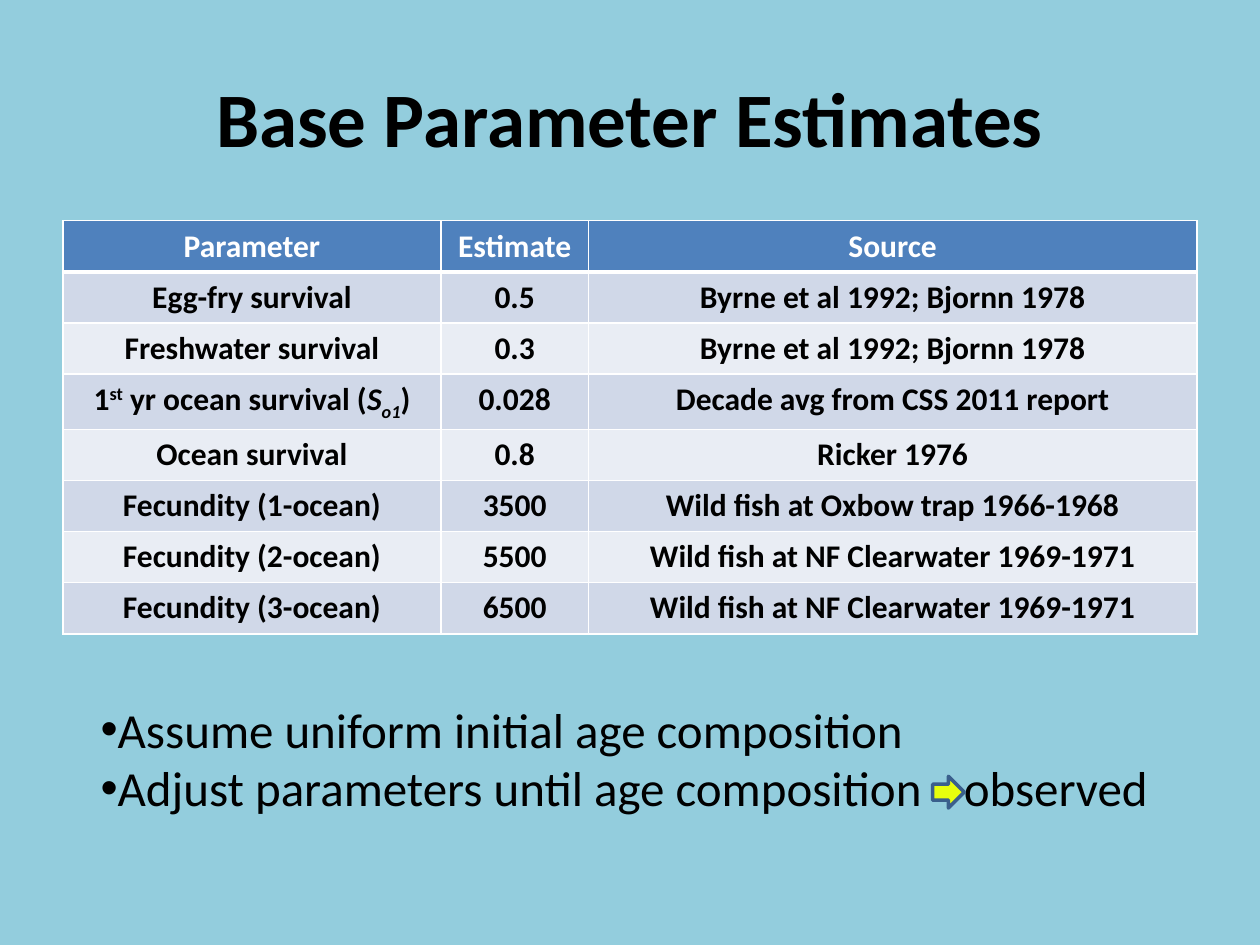
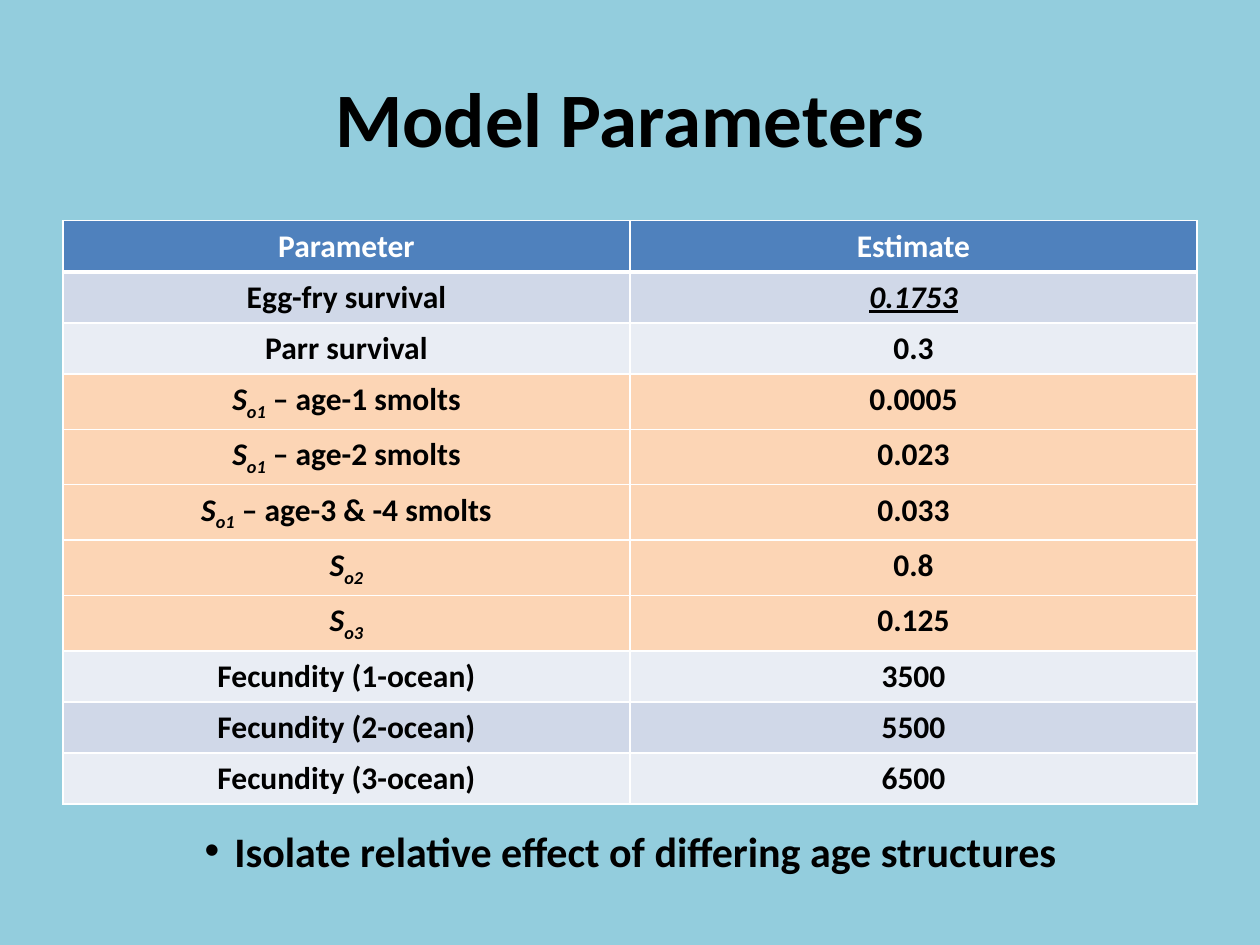
from dataclasses import dataclass

from lxml.etree import SubElement
from pptx import Presentation
from pptx.dml.color import RGBColor
from pptx.enum.shapes import MSO_SHAPE
from pptx.enum.text import MSO_ANCHOR, PP_ALIGN
from pptx.oxml.ns import qn
from pptx.util import Cm, Pt


@dataclass(frozen=True)
class Theme:
    font: str = "Calibri"
    background: str = "93CDDD"
    text: str = "000000"
    header_text: str = "FFFFFF"
    header: str = "4F81BD"
    bands: tuple = ("E9EDF4", "D0D8E8")
    highlight: str = "FCD5B5"
    rule: str = "FFFFFF"
    arrow: str = "E7FE0E"
    arrow_line: str = "3A5F8C"
    title_size: int = 44
    bullet_size: int = 28
    note_size: int = 24
    table_size: int = 18


def rgb(value):
    return RGBColor.from_string(value)


def ocean_survival(year):
    """Runs for the symbol S with its subscript."""
    return [("S", "italic"), (f"o{year}", "italic sub")]


class Deck:
    margin, width = Cm(1.27), Cm(22.86)

    def __init__(self, theme):
        self.theme = theme
        self.prs = Presentation()
        self.prs.slide_width, self.prs.slide_height = Cm(25.4), Cm(19.05)
        fill = self.prs.slide_master.background.fill
        fill.solid()
        fill.fore_color.rgb = rgb(theme.background)
        self.s = None

    def style(self, p, size, color=None, bold=False):
        for r in p.runs:
            r.font.name = self.theme.font
            r.font.size = Pt(size)
            r.font.bold = bold
            r.font.color.rgb = rgb(color or self.theme.text)

    def slide(self, title):
        self.s = self.prs.slides.add_slide(self.prs.slide_layouts[5])
        sp = self.s.shapes.title
        sp.left, sp.top, sp.width, sp.height = self.margin, Cm(0.76), self.width, Cm(3.18)
        tf = sp.text_frame
        tf.text = title
        tf.vertical_anchor = MSO_ANCHOR.MIDDLE
        p = tf.paragraphs[0]
        p.alignment = PP_ALIGN.CENTER
        self.style(p, self.theme.title_size, bold=True)

    def border(self, cell, side, points):
        tc_pr = cell._tc.get_or_add_tcPr()
        ln = SubElement(tc_pr, qn(f"a:ln{side}"), w=str(Pt(points)))
        SubElement(SubElement(ln, qn("a:solidFill")), qn("a:srgbClr"), val=self.theme.rule)

    def cell(self, cell, content, row, fill):
        p = cell.text_frame.paragraphs[0]
        p.alignment = PP_ALIGN.CENTER
        runs = [(content, "")] if isinstance(content, str) else content
        for text, marks in runs:
            r = p.add_run()
            r.text = text
            if "italic" in marks:
                r.font.italic = True
            if "underline" in marks:
                r.font.underline = True
            for mark, baseline in (("sub", "-25000"), ("super", "30000")):
                if mark in marks:
                    r.font._element.set("baseline", baseline)
        color = self.theme.header_text if row == 0 else self.theme.text
        self.style(p, self.theme.table_size, color, bold=True)
        for side in "LRTB":
            under_header = (row, side) in ((0, "B"), (1, "T"))
            self.border(cell, side, 3 if under_header else 1)
        cell.fill.solid()
        cell.fill.fore_color.rgb = rgb(fill)

    def table(self, rows, widths, highlighted=()):
        row_height = Cm(1.03)
        frame = self.s.shapes.add_table(len(rows), len(widths), self.margin, Cm(4.45),
                                        self.width, row_height * len(rows))
        table = frame.table
        for column, width in zip(table.columns, widths):
            column.width = Cm(width)
        for i, contents in enumerate(rows):
            table.rows[i].height = row_height
            fill = self.theme.bands[i % 2]
            if i == 0:
                fill = self.theme.header
            elif i in highlighted:
                fill = self.theme.highlight
            for j, content in enumerate(contents):
                self.cell(table.cell(i, j), content, i, fill)

    def bullets(self, lines, box, size, align=PP_ALIGN.LEFT, bold=False, hanging=0, tab=None):
        """Bulleted text box; hanging and tab are in centimetres."""
        tf = self.s.shapes.add_textbox(*map(Cm, box)).text_frame
        tf.word_wrap = True
        tf.text = "\n".join(lines)
        for p in tf.paragraphs:
            p.alignment = align
            self.style(p, size, bold=bold)
            p_pr = p._p.get_or_add_pPr()
            p_pr.set("marL", str(Cm(hanging)))
            p_pr.set("indent", str(-Cm(hanging)))
            SubElement(p_pr, qn("a:buFont"), typeface="Arial")
            SubElement(p_pr, qn("a:buChar"), char="•")
            if tab:
                tabs = SubElement(p_pr, qn("a:tabLst"))
                SubElement(tabs, qn("a:tab"), pos=str(Cm(tab)), algn="l")

    def arrow(self, left, top, side):
        sp = self.s.shapes.add_shape(MSO_SHAPE.RIGHT_ARROW, *map(Cm, (left, top, side, side)))
        sp.shadow.inherit = False
        sp.fill.solid()
        sp.fill.fore_color.rgb = rgb(self.theme.arrow)
        sp.line.color.rgb = rgb(self.theme.arrow_line)
        sp.line.width = Pt(2)


def base_estimates(deck):
    deck.slide("Base Parameter Estimates")
    first_year = [("1", ""), ("st", "super"), (" yr ocean survival (", ""),
                  *ocean_survival(1), (")", "")]
    deck.table([
        ("Parameter", "Estimate", "Source"),
        ("Egg-fry survival", "0.5", "Byrne et al 1992; Bjornn 1978"),
        ("Freshwater survival", "0.3", "Byrne et al 1992; Bjornn 1978"),
        (first_year, "0.028", "Decade avg from CSS 2011 report"),
        ("Ocean survival", "0.8", "Ricker 1976"),
        ("Fecundity (1-ocean)", "3500", "Wild fish at Oxbow trap 1966-1968"),
        ("Fecundity (2-ocean)", "5500", "Wild fish at NF Clearwater 1969-1971"),
        ("Fecundity (3-ocean)", "6500", "Wild fish at NF Clearwater 1969-1971"),
    ], (7.62, 2.97, 12.27))
    deck.bullets(["Assume uniform initial age composition",
                  "Adjust parameters until age composition\tobserved"],
                 (1.78, 13.97, 21.79, 2.64), deck.theme.bullet_size, tab=17.4)
    deck.arrow(18.8, 15.65, 0.64)


def model_parameters(deck):
    deck.slide("Model Parameters")
    smolts = [([*ocean_survival(1), (f" – age-{ages} smolts", "")], estimate)
              for ages, estimate in (("1", "0.0005"), ("2", "0.023"), ("3 & -4", "0.033"))]
    deck.table([
        ("Parameter", "Estimate"),
        ("Egg-fry survival", [("0.1753", "italic underline")]),
        ("Parr survival", "0.3"),
        *smolts,
        (ocean_survival(2), "0.8"),
        (ocean_survival(3), "0.125"),
        ("Fecundity (1-ocean)", "3500"),
        ("Fecundity (2-ocean)", "5500"),
        ("Fecundity (3-ocean)", "6500"),
    ], (11.43, 11.43), highlighted=range(3, 8))
    deck.bullets(["Isolate relative effect of differing age structures"],
                 (3.61, 16.51, 18.21, 1.27), deck.theme.note_size,
                 PP_ALIGN.CENTER, bold=True, hanging=0.6)


def main():
    deck = Deck(Theme())
    base_estimates(deck)
    model_parameters(deck)
    deck.prs.save("out.pptx")


if __name__ == "__main__":
    main()
